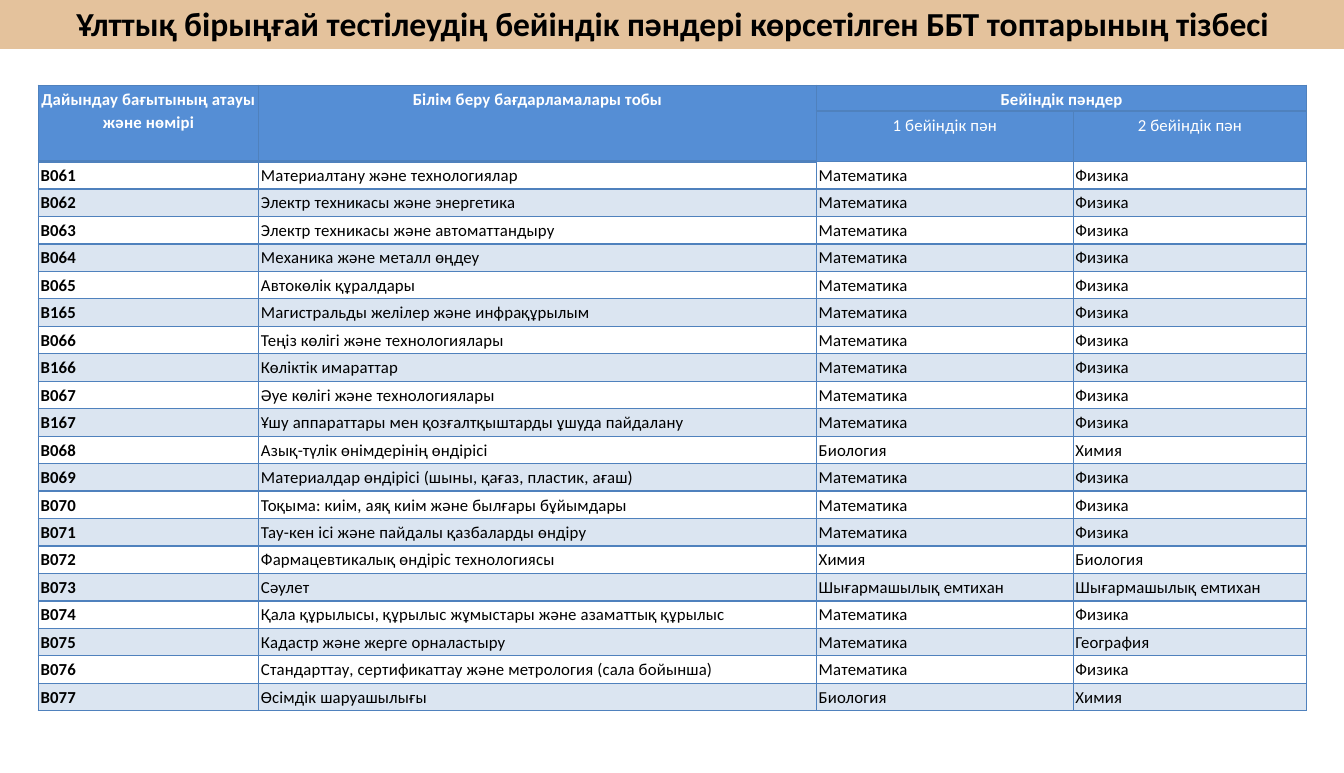
from lxml import etree
from pptx import Presentation
from pptx.dml.color import RGBColor
from pptx.enum import shapes, text
from pptx.oxml import ns
from pptx.util import Pt

COLORS = {"banner": "E4C29C", "header": "558ED5", "line": "4F81BD",
          "ink": "000000", "white": "FFFFFF"}
FONT = "Calibri"
TITLE = "Ұлттық бірыңғай тестілеудің бейіндік пәндері көрсетілген ББТ топтарының тізбесі"
HEADERS = [
    ["Дайындау бағытының атауы және нөмірі", "Білім беру бағдарламалары тобы",
     "Бейіндік пәндер", ""],
    ["", "", "1 бейіндік пән", "2 бейіндік пән"],
]
MATH, PHYS, BIO, CHEM = "Математика", "Физика", "Биология", "Химия"
CREATIVE = "Шығармашылық емтихан"
GROUPS = [
    ["В061", "Материалтану және технологиялар", MATH, PHYS],
    ["В062", "Электр техникасы және энергетика", MATH, PHYS],
    ["В063", "Электр техникасы және автоматтандыру", MATH, PHYS],
    ["В064", "Механика және металл өңдеу", MATH, PHYS],
    ["В065", "Автокөлік құралдары", MATH, PHYS],
    ["В165", "Магистральды желілер және инфрақұрылым", MATH, PHYS],
    ["В066", "Теңіз көлігі және технологиялары", MATH, PHYS],
    ["В166", "Көліктік имараттар", MATH, PHYS],
    ["В067", "Әуе көлігі және технологиялары", MATH, PHYS],
    ["В167", "Ұшу аппараттары мен қозғалтқыштарды ұшуда пайдалану", MATH, PHYS],
    ["В068", "Азық-түлік өнімдерінің өндірісі", BIO, CHEM],
    ["В069", "Материалдар өндірісі (шыны, қағаз, пластик, ағаш)", MATH, PHYS],
    ["В070", "Тоқыма: киім, аяқ киім және былғары бұйымдары", MATH, PHYS],
    ["В071", "Тау-кен ісі және пайдалы қазбаларды өндіру", MATH, PHYS],
    ["В072", "Фармацевтикалық өндіріс технологиясы", CHEM, BIO],
    ["В073", "Сәулет", CREATIVE, CREATIVE],
    ["В074", "Қала құрылысы, құрылыс жұмыстары және азаматтық құрылыс", MATH, PHYS],
    ["В075", "Кадастр және жерге орналастыру", MATH, "География"],
    ["В076", "Стандарттау, сертификаттау және метрология (сала бойынша)", MATH, PHYS],
    ["В077", "Өсімдік шаруашылығы", BIO, CHEM],
]
COL_SHARES = [2.19, 5.54, 2.55, 2.32]
HEADER_HEIGHTS = [18.6, 36]


def rgb(name):
    """Return the named colour."""
    return RGBColor.from_string(COLORS[name])


def add_run(p, words, size, color, bold):
    """Add one formatted run to a paragraph."""
    r = p.add_run()
    r.text = words
    r.font.name = FONT
    r.font.size = Pt(size)
    r.font.bold = bold
    r.font.color.rgb = rgb(color)
    return r


def add_borders(cell, widths):
    """Draw the left, right, top and bottom borders of a cell."""
    tc_pr = cell._tc.get_or_add_tcPr()
    for i, (side, width) in enumerate(zip("LRTB", widths)):
        ln = etree.Element(ns.qn(f"a:ln{side}"), w=str(Pt(width)))
        fill = etree.SubElement(ln, ns.qn("a:solidFill"))
        etree.SubElement(fill, ns.qn("a:srgbClr"), val=COLORS["line"])
        tc_pr.insert(i, ln)


def fill_cell(cell, row):
    """Fill header cells solid and every second body row with a light tint."""
    if row >= 2 and row % 2 == 0:
        cell.fill.background()
        return
    cell.fill.solid()
    cell.fill.fore_color.rgb = rgb("header" if row < 2 else "line")
    if row >= 2:
        clr = cell._tc.tcPr.find(".//" + ns.qn("a:srgbClr"))
        etree.SubElement(clr, ns.qn("a:alpha"), val="20000")


def bottom_width(row, col):
    """Return the width of the line below a cell."""
    return 2 if row == 0 or (row == 1 and col < 2) else 1


def write_cell(cell, row, col, words):
    """Format one table cell and write its text."""
    cell.margin_left = cell.margin_right = Pt(1.6)
    cell.margin_top = cell.margin_bottom = Pt(0.7)
    fill_cell(cell, row)
    add_borders(cell, [1, 1, bottom_width(row - 1, col) if row else 1,
                       bottom_width(row, col)])
    p = cell.text_frame.paragraphs[0]
    p.line_spacing = 1.15
    header = row < 2
    p.alignment = text.PP_ALIGN.CENTER if header else text.PP_ALIGN.LEFT
    if words:
        bold = row == 0 or (not header and col == 0)
        r = add_run(p, words, 12, "white" if header else "ink", bold)
        r._r.get_or_add_rPr().set("spc", "10")


def add_subject_table(s, x, y, w, h):
    """Place the table of programme groups and their profile subjects."""
    rows = HEADERS + GROUPS
    table = s.shapes.add_table(len(rows), len(COL_SHARES),
                               Pt(x), Pt(y), Pt(w), Pt(h)).table
    table.first_row = table.horz_banding = False
    for column, share in zip(table.columns, COL_SHARES):
        column.width = Pt(w * share / sum(COL_SHARES))
    body_height = (h - sum(HEADER_HEIGHTS)) / len(GROUPS)
    heights = HEADER_HEIGHTS + [body_height] * len(GROUPS)
    for i, (words, height) in enumerate(zip(rows, heights)):
        table.rows[i].height = Pt(height)
        for j, word in enumerate(words):
            write_cell(table.cell(i, j), i, j, word)
    for first, last in [((0, 0), (1, 0)), ((0, 1), (1, 1)), ((0, 2), (0, 3))]:
        table.cell(*first).merge(table.cell(*last))


def add_banner(s, x, y, w, h):
    """Place the title banner."""
    sp = s.shapes.add_shape(shapes.MSO_SHAPE.RECTANGLE, Pt(x), Pt(y), Pt(w), Pt(h))
    sp.shadow.inherit = False
    sp.fill.solid()
    sp.fill.fore_color.rgb = rgb("banner")
    sp.line.fill.background()
    tf = sp.text_frame
    tf.word_wrap = True
    tf.auto_size = text.MSO_AUTO_SIZE.SHAPE_TO_FIT_TEXT
    tf.vertical_anchor = text.MSO_ANCHOR.TOP
    p = tf.paragraphs[0]
    p.alignment = text.PP_ALIGN.CENTER
    add_run(p, TITLE, 24, "ink", True)


def main():
    """Build and save the slide."""
    prs = Presentation()
    prs.slide_width, prs.slide_height = Pt(961.2), Pt(553)
    s = prs.slides.add_slide(prs.slide_layouts[6])
    add_subject_table(s, 27.4, 61, 907.2, 447.8)
    add_banner(s, 0, -1.4, 962.6, 36.4)
    prs.save("out.pptx")


if __name__ == "__main__":
    main()
